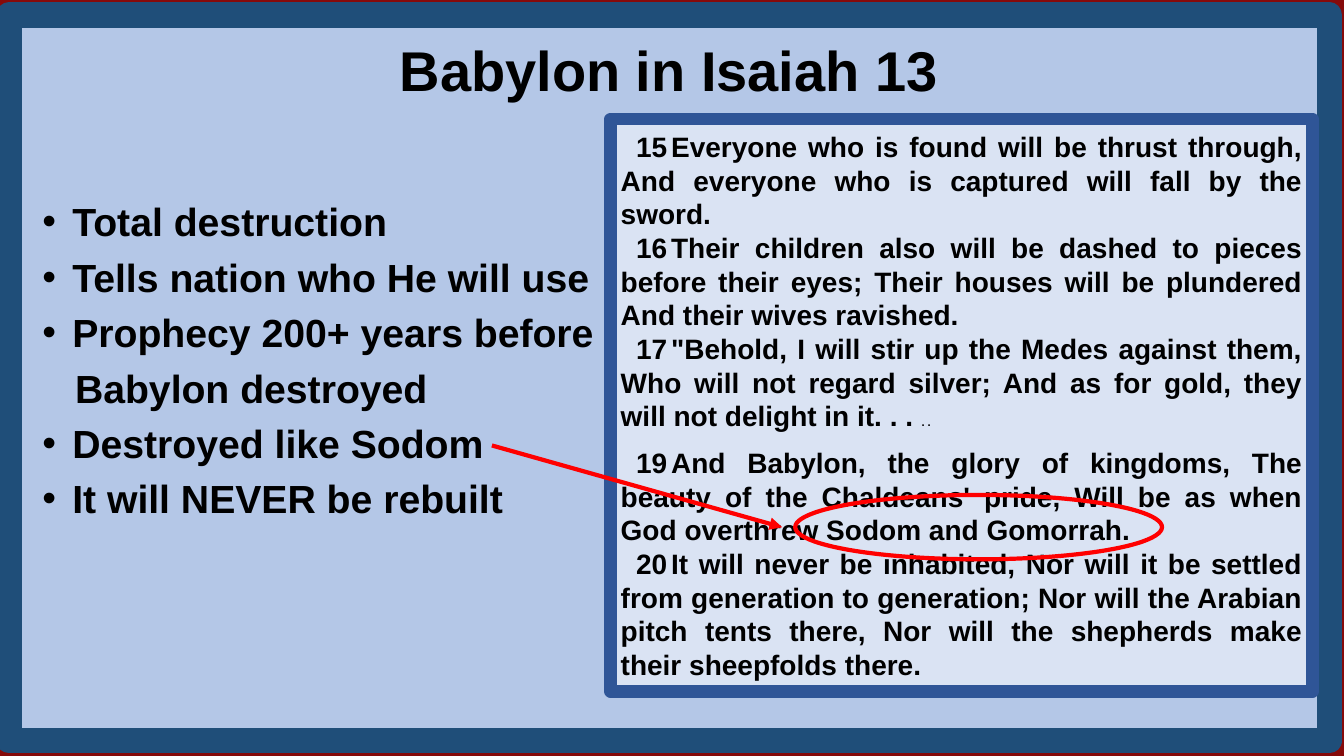
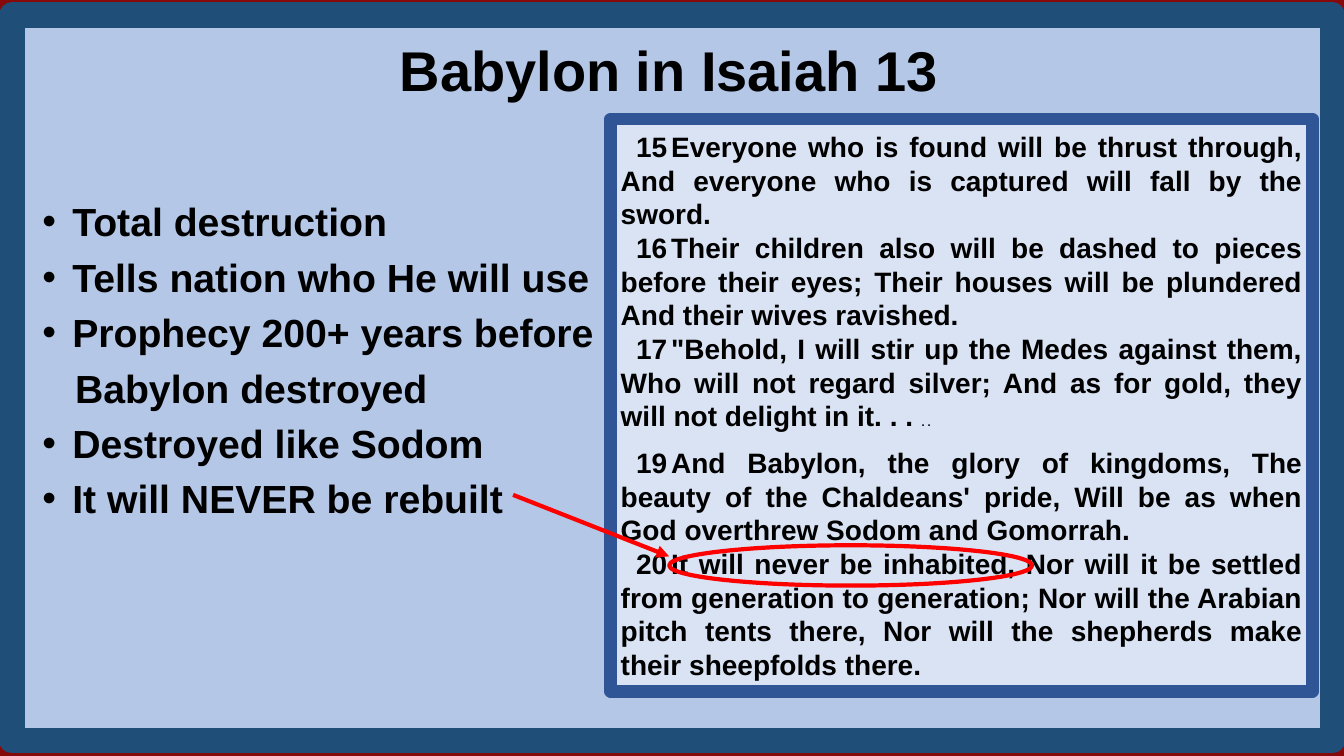
"""Build two slides that link points on Babylon to verses of Isaiah 13."""
from dataclasses import dataclass

from lxml.etree import SubElement
from pptx import Presentation
from pptx.dml.color import RGBColor
from pptx.enum.shapes import MSO_CONNECTOR, MSO_SHAPE
from pptx.enum.text import MSO_ANCHOR, MSO_AUTO_SIZE, PP_ALIGN
from pptx.oxml.ns import qn
from pptx.util import Pt


@dataclass(frozen=True)
class Theme:
    font: str = "Arial"
    edge: str = "860A0A"
    panel: str = "B4C7E7"
    panel_line: str = "1F4E79"
    box: str = "DAE3F3"
    box_line: str = "2F5597"
    mark: str = "FF0000"
    text: str = "000000"
    title_size: float = 40
    list_size: float = 28
    verse_size: float = 20
    small_size: float = 8
    leading: float = 1.2


THEME = Theme()
TITLE = "Babylon in Isaiah 13"
POINTS = [
    ("Total destruction", True),
    ("Tells nation who He will use", True),
    ("Prophecy 200+ years before", True),
    ("Babylon destroyed", False),
    ("Destroyed like Sodom", True),
    ("It will NEVER be rebuilt", True),
]
VERSES = [
    (15, "Everyone who is found will be thrust through, And everyone who is "
         "captured will fall by the sword.", "", 0),
    (16, "Their children also will be dashed to pieces before their eyes; "
         "Their houses will be plundered And their wives ravished.", "", 0),
    (17, "\"Behold, I will stir up the Medes against them, Who will not regard "
         "silver; And as for gold, they will not delight in it. . . ", ". .", 0),
    (19, "And Babylon, the glory of kingdoms, The beauty of the Chaldeans' "
         "pride, Will be as when God overthrew Sodom and Gomorrah.", "", 9.6),
    (20, "It will never be inhabited, Nor will it be settled from generation to "
         "generation; Nor will the Arabian pitch tents there, Nor will the "
         "shepherds make their sheepfolds there.", "", 0),
]
SLIDES = [
    {"panel_left": 6.5, "arrow": (351.4, 318.2, 558.7, 376.6),
     "ring": (568, 353.5, 262, 46)},
    {"panel_left": 8.6, "arrow": (366.5, 353.5, 478, 397.4),
     "ring": (478, 389.5, 259.2, 28.8)},
]


def points(values):
    return [Pt(v) for v in values]


def apply(obj, values):
    for name, value in values.items():
        setattr(obj, name, value)


def style_line(line, color, width):
    line.color.rgb = RGBColor.from_string(color)
    line.width = Pt(width)


def style_text(item, size):
    apply(item.font, {"name": THEME.font, "size": Pt(size), "bold": True})
    item.font.color.rgb = RGBColor.from_string(THEME.text)


def style_paragraph(p, size, before=0, after=0, align=PP_ALIGN.LEFT):
    apply(p, {"alignment": align, "line_spacing": Pt(size * THEME.leading),
              "space_before": Pt(before), "space_after": Pt(after)})


def set_indent(p, left, first):
    pPr = p._p.get_or_add_pPr()
    pPr.set("marL", str(Pt(left)))
    pPr.set("indent", str(Pt(first)))
    return pPr


def add_run(p, text, size):
    r = p.add_run()
    r.text = text
    style_text(r, size)


def next_paragraph(tf, i):
    return tf.add_paragraph() if i else tf.paragraphs[0]


def setup_frame(tf, anchor=MSO_ANCHOR.TOP):
    apply(tf, {"word_wrap": True, "auto_size": MSO_AUTO_SIZE.NONE,
               "vertical_anchor": anchor})


def place(sp, at):
    apply(sp, dict(zip(("left", "top", "width", "height"), points(at))))


def add_shape(s, kind, at, fill, line, width):
    sp = s.shapes.add_shape(kind, *points(at))
    sp.shadow.inherit = False
    if fill:
        sp.fill.solid()
        sp.fill.fore_color.rgb = RGBColor.from_string(fill)
    else:
        sp.fill.background()
    style_line(sp.line, line, width)
    return sp


def add_panel(s, left):
    sp = add_shape(s, MSO_SHAPE.RECTANGLE, (left, 10.8, 943.2, 518.4),
                   THEME.panel, THEME.panel_line, 18)
    s.shapes.element.insert(2, sp.element)


def fill_title(s):
    sp = s.shapes.title
    place(sp, (18.7, 21.6, 918, 55.4))
    setup_frame(sp.text_frame)
    p = sp.text_frame.paragraphs[0]
    style_paragraph(p, THEME.title_size, align=PP_ALIGN.CENTER)
    add_run(p, TITLE, THEME.title_size)


def fill_points(s):
    sp = s.placeholders[1]
    place(sp, (23, 137.5, 413.3, 241.2))
    tf = sp.text_frame
    setup_frame(tf)
    for i, (text, bulleted) in enumerate(POINTS):
        p = next_paragraph(tf, i)
        if bulleted:
            pPr = set_indent(p, 21.5, -21.5)
            SubElement(pPr, qn("a:buChar")).set("char", "•")
        else:
            pPr = set_indent(p, 23.4, 0)
            SubElement(pPr, qn("a:buNone"))
        style_paragraph(p, THEME.list_size, after=6)
        add_run(p, text, THEME.list_size)


def add_passage(s):
    sp = add_shape(s, MSO_SHAPE.RECTANGLE, (436.3, 85, 501.1, 409),
                   THEME.box, THEME.box_line, 9)
    tf = sp.text_frame
    setup_frame(tf, MSO_ANCHOR.MIDDLE)
    for i, (number, text, trail, before) in enumerate(VERSES):
        p = next_paragraph(tf, i)
        tabs = SubElement(set_indent(p, 0, 11), qn("a:tabLst"))
        tab = SubElement(tabs, qn("a:tab"))
        tab.set("pos", str(Pt(44.5)))
        tab.set("algn", "l")
        style_paragraph(p, THEME.verse_size, before, align=PP_ALIGN.JUSTIFY)
        add_run(p, f"{number}\t{text}", THEME.verse_size)
        if trail:
            add_run(p, trail, THEME.small_size)


def add_arrow(s, ends):
    cx = s.shapes.add_connector(MSO_CONNECTOR.STRAIGHT, *points(ends))
    style_line(cx.line, THEME.mark, 3)
    spPr = cx.element.spPr
    SubElement(spPr.find(qn("a:ln")), qn("a:tailEnd")).set("type", "triangle")
    SubElement(spPr, qn("a:effectLst"))


def build_slide(prs, panel_left, arrow, ring):
    s = prs.slides.add_slide(prs.slide_layouts[1])
    add_panel(s, panel_left)
    fill_title(s)
    add_passage(s)
    fill_points(s)
    add_arrow(s, arrow)
    add_shape(s, MSO_SHAPE.OVAL, ring, None, THEME.mark, 3)


def main():
    prs = Presentation()
    apply(prs, {"slide_width": Pt(960), "slide_height": Pt(540)})
    fill = prs.slide_master.background.fill
    fill.solid()
    fill.fore_color.rgb = RGBColor.from_string(THEME.edge)
    for content in SLIDES:
        build_slide(prs, **content)
    prs.save("out.pptx")


if __name__ == "__main__":
    main()
